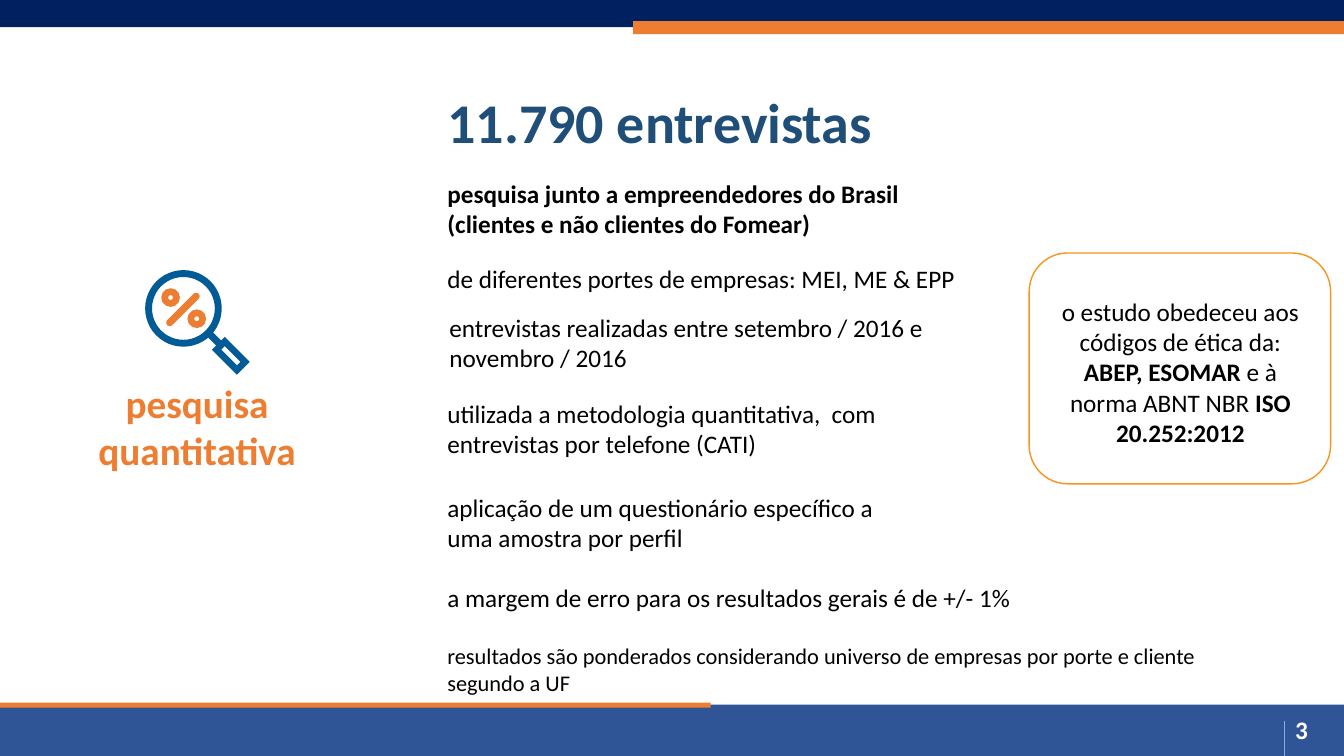
"""Builds the survey method slide on a grid of tenth-inch columns and rows."""
import dataclasses
import typing

import pptx
import pptx.dml.color
import pptx.enum.shapes
import pptx.enum.text
import pptx.oxml
import pptx.oxml.ns
import pptx.util

RGBColor = pptx.dml.color.RGBColor
Kind = pptx.enum.shapes.MSO_SHAPE
Align = pptx.enum.text.PP_ALIGN

NAVY = RGBColor(0x00, 0x20, 0x60)
BLUE = RGBColor(0x2F, 0x55, 0x97)
STEEL = RGBColor(0x1F, 0x4E, 0x79)
LENS = RGBColor(0x01, 0x5B, 0x97)
PALE = RGBColor(0x8F, 0xAA, 0xDC)
ORANGE = RGBColor(0xED, 0x7D, 0x31)
AMBER = RGBColor(0xF7, 0x94, 0x1E)
BLACK = RGBColor(0, 0, 0)
WHITE = RGBColor(255, 255, 255)

FONT = "Calibri"
COLS, ROWS = 133.33, 75
LEFT = 43.4


@dataclasses.dataclass(frozen=True)
class Box:
    col: float
    row: float
    wide: float
    high: float


@dataclasses.dataclass(frozen=True)
class Form:
    box: Box
    fill: typing.Optional[RGBColor]
    kind: Kind = Kind.RECTANGLE
    line: typing.Optional[RGBColor] = None
    adjust: typing.Optional[float] = None
    turn: float = 0


@dataclasses.dataclass(frozen=True)
class Part:
    text: str
    bold: bool = False


@dataclasses.dataclass(frozen=True)
class Label:
    box: Box
    lines: tuple[tuple[Part, ...], ...]
    size: int = 18
    color: RGBColor = BLACK
    align: Align = Align.LEFT
    wrap: bool = True


BARS = (
    Form(Box(0, 0, COLS, 2.7), NAVY),
    Form(Box(62.8, 2.1, 70.53, 1.3), ORANGE),
    Form(Box(0, 69.9, COLS, 5.1), BLUE),
    Form(Box(0, 69.7, 70.5, 0.5), ORANGE),
)
FRAME = Form(Box(102.1, 25.1, 29.9, 22.9), None, Kind.ROUNDED_RECTANGLE, AMBER)
ICON = (
    Form(Box(14.4, 26.8, 7.6, 7.6), LENS, Kind.DONUT, adjust=0.09),
    Form(Box(20.4, 33.25, 1.7, 0.7), LENS, turn=45),
    Form(Box(21.15, 34.4, 3.5, 1.8), LENS, Kind.FRAME, adjust=0.36, turn=45),
    Form(Box(15.95, 30.35, 4.4, 0.7), ORANGE, Kind.ROUNDED_RECTANGLE, adjust=0.5, turn=-45),
    Form(Box(16, 28.6, 1.85, 1.85), ORANGE, Kind.DONUT, adjust=0.37),
    Form(Box(18.6, 30.7, 1.85, 1.85), ORANGE, Kind.DONUT, adjust=0.37),
)


def plain(text: str, bold: bool = False) -> tuple[tuple[Part, ...], ...]:
    """Return one line made of one part."""
    return ((Part(text, bold),),)


TITLE = Label(Box(LEFT, 8.2, 88.2, 7.7), plain("11.790 entrevistas", True), 40, STEEL)
LABELS = (
    Label(Box(103.4, 28.9, 27.4, 16.2), (
        (Part("o estudo obedeceu aos códigos de ética da:"),),
        (Part("ABEP, ESOMAR ", True), Part("e à norma ABNT NBR "),
         Part("ISO 20.252:2012", True)),
    ), align=Align.CENTER),
    Label(Box(6.8, 37.1, 25.5, 10.4), plain("pesquisa quantitativa", True),
          28, ORANGE, Align.CENTER),
    Label(Box(LEFT, 17.2, 51.2, 7.1), plain(
        "pesquisa junto a empreendedores do Brasil (clientes e não clientes do Fomear)", True)),
    Label(Box(LEFT, 25.6, 54, 4), plain("de diferentes portes de empresas: MEI, ME & EPP")),
    Label(Box(43.6, 30.5, 51.4, 7.1), plain(
        "entrevistas realizadas entre setembro / 2016 e novembro / 2016")),
    Label(Box(LEFT, 39, 53, 7.1), plain(
        "utilizada a metodologia quantitativa,  com entrevistas por telefone (CATI)")),
    Label(Box(LEFT, 48.3, 49.1, 7.1), plain(
        "aplicação de um questionário específico a uma amostra por perfil")),
    Label(Box(LEFT, 57.3, 84, 4), plain("a margem de erro para os resultados gerais é de +/- 1%")),
    Label(Box(LEFT, 63.2, 84, 6.4), plain(
        "resultados são ponderados considerando universo de empresas por porte e cliente "
        "segundo a UF"), 16),
    Label(Box(127.5, 70.4, 5.8, 4), plain("3", True), color=WHITE, wrap=False),
)


def unit(count: float) -> int:
    """Turn grid steps into a slide length."""
    return pptx.util.Inches(count / 10)


def place(box: Box) -> tuple[int, int, int, int]:
    """Return the left, top, width and height of a box."""
    return unit(box.col), unit(box.row), unit(box.wide), unit(box.high)


def draw(slide: typing.Any, form: Form) -> None:
    """Add one preset shape."""
    shape = slide.shapes.add_shape(form.kind, *place(form.box))
    shape.shadow.inherit = False
    shape.rotation = form.turn
    if form.adjust is not None:
        shape.adjustments[0] = form.adjust
    if form.fill is None:
        shape.fill.background()
    else:
        shape.fill.solid()
        shape.fill.fore_color.rgb = form.fill
    if form.line is None:
        shape.line.fill.background()
    else:
        shape.line.color.rgb = form.line
        shape.line.width = pptx.util.Pt(1)


def write(shape: typing.Any, label: Label) -> None:
    """Fill a shape with the text of a label."""
    frame = shape.text_frame
    frame.word_wrap = label.wrap
    frame.auto_size = pptx.enum.text.MSO_AUTO_SIZE.NONE
    frame.vertical_anchor = pptx.enum.text.MSO_ANCHOR.TOP
    for index, line in enumerate(label.lines):
        para = frame.add_paragraph() if index else frame.paragraphs[0]
        para.alignment = label.align
        for part in line:
            run = para.add_run()
            run.text = part.text
            run.font.name = FONT
            run.font.size = pptx.util.Pt(label.size)
            run.font.bold = part.bold
            run.font.color.rgb = label.color


def rule(slide: typing.Any, col: float, top: float, end: float) -> None:
    """Add the thin upright line beside the page number."""
    line = slide.shapes.add_connector(
        pptx.enum.shapes.MSO_CONNECTOR.STRAIGHT, unit(col), unit(top), unit(col), unit(end))
    line.line.color.rgb = PALE
    line.line.width = pptx.util.Pt(0.5)
    props = line._element.spPr
    props.append(pptx.oxml.parse_xml(f"<a:effectLst {pptx.oxml.ns.nsdecls('a')}/>"))


def main() -> None:
    """Build and save the slide."""
    deck = pptx.Presentation()
    deck.slide_width, deck.slide_height = unit(COLS), unit(ROWS)
    slide = deck.slides.add_slide(deck.slide_layouts[5])
    title = slide.shapes.title
    title.left, title.top, title.width, title.height = place(TITLE.box)
    write(title, TITLE)
    for form in (*BARS, FRAME, *ICON):
        draw(slide, form)
    rule(slide, 127.4, 71.5, ROWS)
    for label in LABELS:
        write(slide.shapes.add_textbox(*place(label.box)), label)
    deck.save("out.pptx")


if __name__ == "__main__":
    main()
